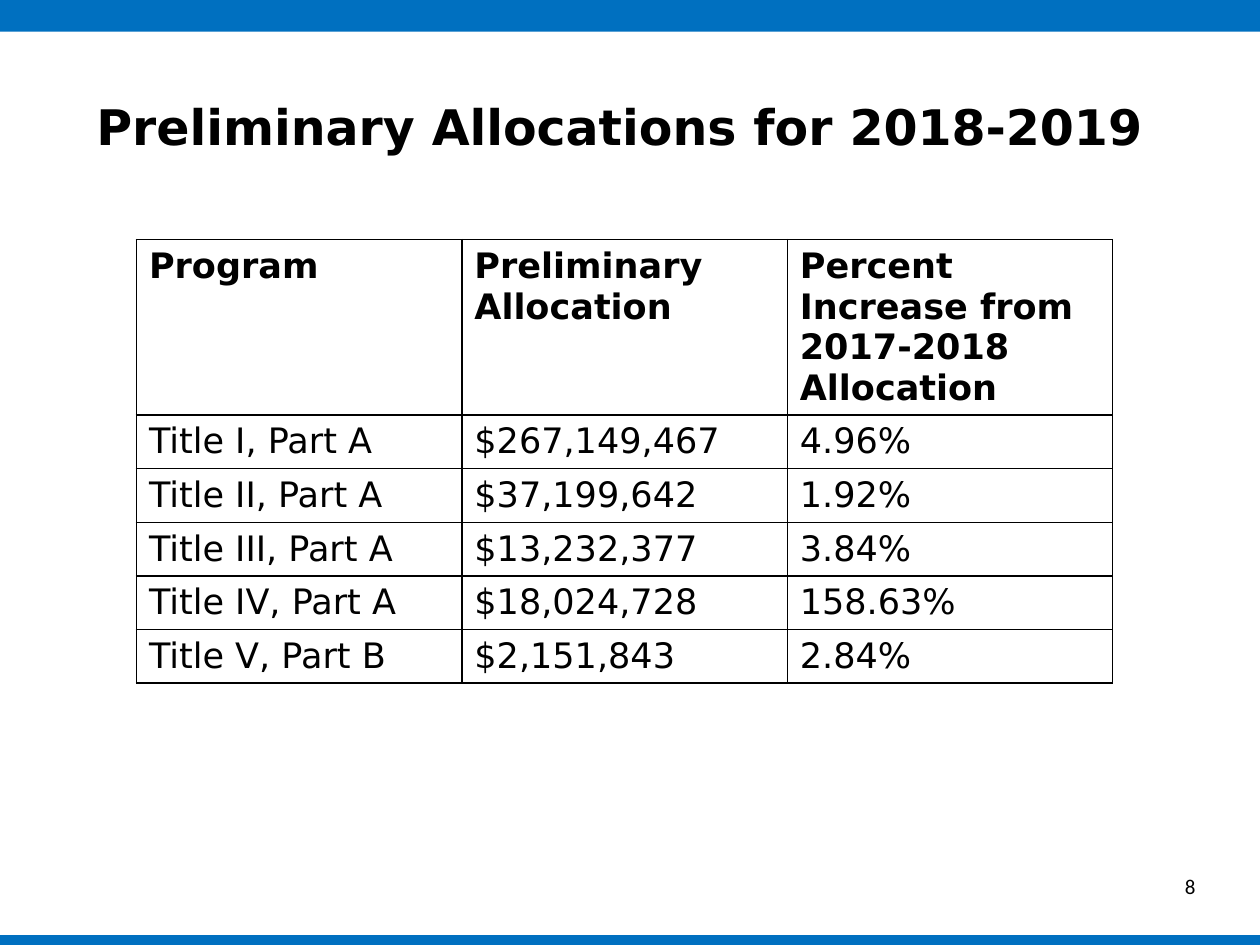
from pptx import Presentation
from pptx.dml.color import RGBColor
from pptx.enum.shapes import MSO_SHAPE
from pptx.enum.text import MSO_ANCHOR, PP_ALIGN
from pptx.oxml import parse_xml
from pptx.oxml.ns import nsdecls
from pptx.util import Cm, Pt

COLORS = {"band": "0070C0", "text": "000000", "border": "000000", "cell": "FFFFFF"}
WIDTH, HEIGHT = 25.4, 19.05
TOP_BAND, BOTTOM_BAND = 0.64, 0.2
HEADER_HEIGHT, ROW_HEIGHT = 3.53, 1.08

ALLOCATIONS = [
    ("Program", "Preliminary Allocation", "Percent Increase from 2017-2018 Allocation"),
    ("Title I, Part A", "$267,149,467", "4.96%"),
    ("Title II, Part A", "$37,199,642", "1.92%"),
    ("Title III, Part A", "$13,232,377", "3.84%"),
    ("Title IV, Part A", "$18,024,728", "158.63%"),
    ("Title V, Part B", "$2,151,843", "2.84%"),
]


class SlideBuilder:
    font = "DejaVu Sans"

    def __init__(self, slide):
        self.slide = slide

    def color(self, name):
        return RGBColor.from_string(COLORS[name])

    def add_text(self, frame, text, size, bold=False, align=PP_ALIGN.LEFT, font=None):
        frame.word_wrap = True
        paragraph = frame.paragraphs[0]
        paragraph.alignment = align
        run = paragraph.add_run()
        run.text = text
        run.font.name = font or self.font
        run.font.size = Pt(size)
        run.font.bold = bold
        run.font.color.rgb = self.color("text")

    def band(self, top, height):
        band = self.slide.shapes.add_shape(
            MSO_SHAPE.RECTANGLE, Cm(0), Cm(top), Cm(WIDTH), Cm(height))
        band.shadow.inherit = False
        band.fill.solid()
        band.fill.fore_color.rgb = self.color("band")
        band.line.fill.background()

    def title(self, text, left, top, width, height):
        title = self.slide.shapes.title
        title.left, title.top = Cm(left), Cm(top)
        title.width, title.height = Cm(width), Cm(height)
        title.text_frame.vertical_anchor = MSO_ANCHOR.MIDDLE
        self.add_text(title.text_frame, text, 28, True, PP_ALIGN.CENTER)

    def border(self, cell):
        properties = cell._tc.get_or_add_tcPr()
        for position, side in enumerate(("lnL", "lnR", "lnT", "lnB")):
            properties.insert(position, parse_xml(
                f'<a:{side} {nsdecls("a")} w="{Pt(1)}"><a:solidFill>'
                f'<a:srgbClr val="{COLORS["border"]}"/></a:solidFill></a:{side}>'))

    def table(self, rows, left, top, width):
        height = HEADER_HEIGHT + ROW_HEIGHT * (len(rows) - 1)
        table = self.slide.shapes.add_table(
            len(rows), len(rows[0]), Cm(left), Cm(top), Cm(width), Cm(height)).table
        table.horz_banding = False
        for r, values in enumerate(rows):
            header = r == 0
            table.rows[r].height = Cm(HEADER_HEIGHT if header else ROW_HEIGHT)
            for c, value in enumerate(values):
                cell = table.cell(r, c)
                cell.fill.solid()
                cell.fill.fore_color.rgb = self.color("cell")
                self.border(cell)
                self.add_text(cell.text_frame, value, 20, header)

    def page_number(self, text, left, top, width, height):
        number = self.slide.shapes.add_textbox(Cm(left), Cm(top), Cm(width), Cm(height))
        number.text_frame.vertical_anchor = MSO_ANCHOR.MIDDLE
        self.add_text(number.text_frame, text, 12, align=PP_ALIGN.RIGHT, font="Calibri")


def main():
    deck = Presentation()
    deck.slide_width, deck.slide_height = Cm(WIDTH), Cm(HEIGHT)
    builder = SlideBuilder(deck.slides.add_slide(deck.slide_layouts[5]))
    builder.band(HEIGHT - BOTTOM_BAND, BOTTOM_BAND)
    builder.band(0, TOP_BAND)
    builder.title("Preliminary Allocations for 2018-2019", 0.84, 0.84, 23.29, 3.38)
    builder.table(ALLOCATIONS, 2.75, 4.83, 19.68)
    builder.page_number("8", 18.42, 17.36, 5.93, 1.02)
    deck.save("out.pptx")


if __name__ == "__main__":
    main()
